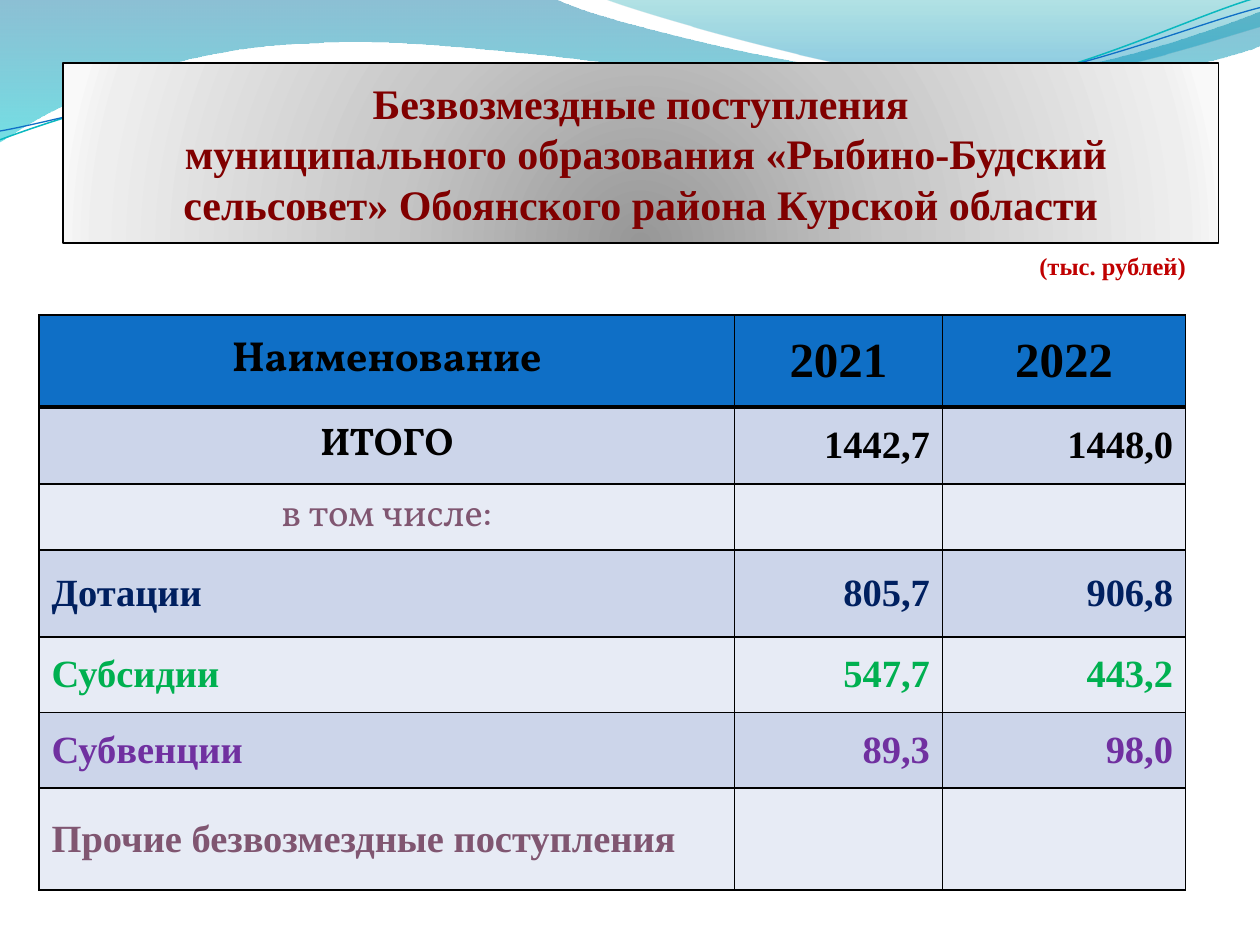
from dataclasses import dataclass
from math import cos, radians, sin

from lxml.etree import SubElement
from pptx import Presentation
from pptx.dml.color import RGBColor
from pptx.enum.text import MSO_ANCHOR, MSO_AUTO_SIZE, PP_ALIGN
from pptx.oxml import parse_xml
from pptx.oxml.ns import qn
from pptx.util import Inches, Pt

NS = 'xmlns:a="http://schemas.openxmlformats.org/drawingml/2006/main"'


@dataclass(frozen=True)
class Theme:
    serif: str = "Times New Roman"
    display: str = "Vollkorn"
    black: str = "000000"
    title: str = "800000"
    unit: str = "C00000"
    header: str = "0F6FC6"
    bands: tuple = ("CCD5EA", "E7EBF5")
    muted: str = "805671"
    grants: str = "002060"
    subsidies: str = "00B050"
    subventions: str = "7030A0"
    wide_wave: tuple = ((0, "0074A1", 45), (100, "00C6CF", 55))
    right_wave: tuple = ((0, "00A1A9", 30), (80, "008BBF", 45))
    title_glow: tuple = ((0, "979797", 100), (43, "C6C6C6", 100),
                         (93, "EEEEEE", 100), (100, "F9F9F9", 100))
    teal_line: str = "0AB8BF"
    title_size: int = 24
    unit_size: int = 14
    name_size: int = 24
    year_size: int = 28
    body_size: int = 22


THEME = Theme()
DOWNWARD = '<a:lin ang="5400000" scaled="0"/>'
FROM_BELOW = ('<a:path path="circle"><a:fillToRect l="50000" t="130000" '
              'r="50000" b="-30000"/></a:path>')
CURVE_TILT = 357.3

WIDE_WAVE = [[(0, 0)], [(4.4, -0.01)],
             [(4.76, 0.17), (6.64, 0.63), (7.58, 0.63)],
             [(8.53, 0.63), (9.58, 0.26), (10, 0.09)], [(10.01, 0.36)],
             [(9.83, 0.44), (8.7, 0.76), (7.46, 0.75)],
             [(6.22, 0.75), (3.82, 0.28), (2.57, 0.34)],
             [(1.29, 0.36), (0.46, 0.83), (-0.01, 1.13)], [(0, 0)]]
RIGHT_WAVE = [[(4.79, -0.01)], [(5.09, 0.11), (6.82, 0.62), (7.69, 0.65)],
              [(8.56, 0.69), (9.61, 0.32), (10, 0.21)], [(10, 0)], [(4.79, -0.01)]]
TEAL_CURVE = [[(0, 1.11)], [(0.48, 0.93), (1.58, 0.57), (2.77, 0.52)],
              [(3.95, 0.47), (5.93, 0.89), (7.13, 0.8)],
              [(8.33, 0.71), (9.38, 0.15), (9.98, -0.02)]]
BLUE_CURVE = [[(0, 1.04)], [(0.47, 0.96), (1.64, 0.61), (2.83, 0.56)],
              [(4.03, 0.51), (5.97, 0.84), (7.17, 0.75)],
              [(8.36, 0.67), (9.41, 0.21), (10, 0.06)]]


def color(value):
    return RGBColor.from_string(value)


def write(paragraph, text, size, ink, font=THEME.serif, bold=True):
    run = paragraph.add_run()
    run.text = text
    run.font.name, run.font.size, run.font.bold = font, Pt(size), bold
    run.font.color.rgb = color(ink)


def fill_gradient(shape, stops, direction):
    shape.fill.gradient()
    default_fill = shape._element.spPr.find(qn("a:gradFill"))
    stop_list = "".join(
        f'<a:gs pos="{pos * 1000}"><a:srgbClr val="{tone}">'
        f'<a:alpha val="{alpha * 1000}"/></a:srgbClr></a:gs>'
        for pos, tone, alpha in stops)
    gradient = parse_xml(f'<a:gradFill {NS} rotWithShape="1"><a:gsLst>{stop_list}'
                         f'</a:gsLst>{direction}</a:gradFill>')
    default_fill.getparent().replace(default_fill, gradient)


def to_local(point, box, tilt):
    left, top, width, height = box
    dx, dy = point[0] - left - width / 2, point[1] - top - height / 2
    turn = radians(-tilt)
    return (Inches(width / 2 + dx * cos(turn) - dy * sin(turn)),
            Inches(height / 2 + dx * sin(turn) + dy * cos(turn)))


def add_outline(slide, box, segments, tilt=0, closed=False):
    local = [[to_local(point, box, tilt) for point in segment] for segment in segments]
    builder = slide.shapes.build_freeform(*local[0][0])
    builder.add_line_segments([segment[-1] for segment in local[1:]], close=closed)
    outline = builder.convert_to_shape()
    outline.left, outline.top, outline.width, outline.height = map(Inches, box)
    outline.rotation = tilt
    outline.shadow.inherit = False

    route = next(outline._element.iter(qn("a:path")))
    route.set("w", str(outline.width))
    route.set("h", str(outline.height))
    for step, segment in zip(list(route), local):
        if len(segment) == 3:
            curve = SubElement(route, qn("a:cubicBezTo"))
            route.replace(step, curve)
            step = curve
        for point in list(step):
            step.remove(point)
        for x, y in segment:
            SubElement(step, qn("a:pt"), x=str(x), y=str(y))
    return outline


def add_waves(slide, box):
    left, top, width, height = box
    wide_box = (left, top, width, height)
    right_box = (left + 4.8, top, 5.21, 0.7)
    for wave_box, segments, stops in ((wide_box, WIDE_WAVE, THEME.wide_wave),
                                      (right_box, RIGHT_WAVE, THEME.right_wave)):
        wave = add_outline(slide, wave_box, segments, closed=True)
        fill_gradient(wave, stops, DOWNWARD)
        wave.line.fill.background()
    teal_box = (left - 0.01, top + 0.23, 10.02, 0.71)
    blue_box = (left - 0.01, top + 0.31, 10.03, 0.58)
    for curve_box, segments, ink, weight in (
            (teal_box, TEAL_CURVE, THEME.teal_line, 0.85),
            (blue_box, BLUE_CURVE, THEME.header, 0.75)):
        curve = add_outline(slide, curve_box, segments, CURVE_TILT)
        curve.fill.background()
        curve.line.color.rgb = color(ink)
        curve.line.width = Pt(weight)


def add_title(slide, box):
    title = slide.shapes.title
    title.left, title.top, title.width, title.height = map(Inches, box)
    slide.shapes._spTree.append(title._element)
    fill_gradient(title, THEME.title_glow, FROM_BELOW)
    title.line.color.rgb = color(THEME.black)
    title.line.width = Pt(0.75)
    title.shadow.inherit = False
    frame = title.text_frame
    frame.auto_size = MSO_AUTO_SIZE.NONE
    frame.word_wrap = True
    frame.vertical_anchor = MSO_ANCHOR.MIDDLE
    heading = frame.paragraphs[0]
    heading.alignment = PP_ALIGN.CENTER
    write(heading, "Безвозмездные поступления", THEME.title_size, THEME.title)
    heading.add_line_break()
    write(heading, " муниципального образования «Рыбино-Будский сельсовет» "
          "Обоянского района Курской области", THEME.title_size, THEME.title)


def add_unit(slide, box):
    unit = slide.shapes.add_textbox(*map(Inches, box)).text_frame
    unit.word_wrap = True
    unit.auto_size = MSO_AUTO_SIZE.SHAPE_TO_FIT_TEXT
    write(unit.paragraphs[0], "(тыс. рублей)", THEME.unit_size, THEME.unit)


def set_borders(cell, top, bottom):
    properties = cell._tc.get_or_add_tcPr()
    widths = {"a:lnL": 1, "a:lnR": 1, "a:lnT": top, "a:lnB": bottom}
    for position, (side, width) in enumerate(widths.items()):
        line = SubElement(properties, qn(side), w=str(Pt(width)))
        SubElement(SubElement(line, qn("a:solidFill")), qn("a:srgbClr"), val=THEME.black)
        properties.insert(position, line)


def add_receipts(slide, box):
    center, left, right = PP_ALIGN.CENTER, PP_ALIGN.LEFT, PP_ALIGN.RIGHT
    rows = [
        (0.73, ("Наименование", "2021", "2022"), THEME.black, center),
        (0.61, ("ИТОГО", "1442,7", "1448,0"), THEME.black, center),
        (0.45, ("в том числе:", "", ""), THEME.muted, center),
        (0.69, ("Дотации", "805,7", "906,8"), THEME.grants, left),
        (0.6, ("Субсидии", "547,7", "443,2"), THEME.subsidies, left),
        (0.6, ("Субвенции", "89,3", "98,0"), THEME.subventions, left),
        (0.81, ("Прочие безвозмездные поступления", "", ""), THEME.muted, left),
    ]
    receipts = slide.shapes.add_table(len(rows), 3, *map(Inches, box)).table
    for column, width in zip(receipts.columns, (5.52, 1.65, 1.93)):
        column.width = Inches(width)
    for r, (height, texts, ink, name_align) in enumerate(rows):
        receipts.rows[r].height = Inches(height)
        for c, text in enumerate(texts):
            cell = receipts.cell(r, c)
            cell.vertical_anchor = MSO_ANCHOR.MIDDLE
            cell.fill.solid()
            cell.fill.fore_color.rgb = color(THEME.bands[(r - 1) % 2] if r else THEME.header)
            set_borders(cell, top=3 if r == 1 else 1, bottom=3 if r == 0 else 1)
            if not text:
                continue
            entry = cell.text_frame.paragraphs[0]
            entry.alignment = right if r and c else name_align
            size = THEME.body_size if r else (THEME.year_size if c else THEME.name_size)
            font = THEME.display if c == 0 and name_align == center else THEME.serif
            write(entry, text, size, ink, font, bold=r != 2)


def main():
    deck = Presentation()
    deck.slide_width, deck.slide_height = Inches(10), Inches(7.5)
    slide = deck.slides.add_slide(deck.slide_layouts[5])
    add_waves(slide, (-0.01, -0.01, 10.02, 1.14))
    add_receipts(slide, (0.31, 2.5, 9.1, 4.51))
    add_title(slide, (0.5, 0.5, 9.17, 1.43))
    add_unit(slide, (8.15, 1.94, 1.42, 0.33))
    deck.save("out.pptx")


if __name__ == "__main__":
    main()
